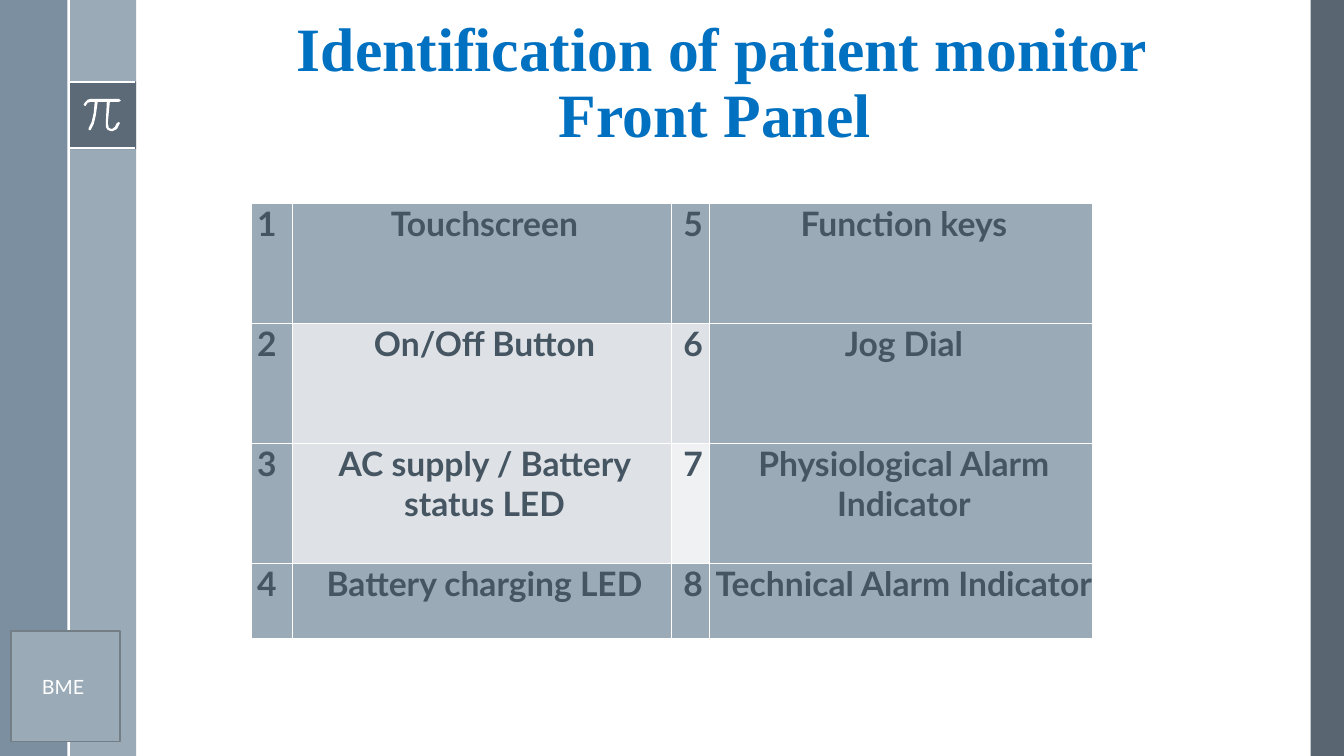
from pptx import Presentation, util as u
from pptx.dml.color import RGBColor
from pptx.enum import shapes, text
from pptx.oxml import parse_xml
from pptx.oxml.ns import nsdecls, qn

SLATE, STEEL, WHITE = "475562", "9BAAB7", "FFFFFF"
PALE, PALER = "DEE2E6", "EFF1F3"
BODY_FONT = "Lato"

PARTS = [
    ("1", "Touchscreen", "5", "Function keys"),
    ("2", "On/Off Button", "6", "Jog Dial"),
    ("3", "AC supply / Battery status LED", "7", "Physiological Alarm Indicator"),
    ("4", "Battery charging LED", "8", "Technical Alarm Indicator"),
]
PALE_CELLS = {(1, 1): PALE, (1, 2): PALE, (2, 1): PALE, (2, 2): PALER}

# Outline of the pi sign, in inches from its own top left corner
PI_POINTS = [
    (0.35, 0), (0.07, 0), (0.04, 0.01), (0.01, 0.04), (0, 0.06), (0.01, 0.07),
    (0.02, 0.07), (0.04, 0.04), (0.07, 0.03), (0.11, 0.03), (0.1, 0.14),
    (0.08, 0.23), (0.05, 0.29), (0.05, 0.31), (0.06, 0.31), (0.07, 0.31),
    (0.1, 0.25), (0.12, 0.17), (0.14, 0.03), (0.23, 0.03), (0.22, 0.24),
    (0.22, 0.28), (0.24, 0.31), (0.27, 0.32), (0.29, 0.32), (0.33, 0.3),
    (0.36, 0.24), (0.35, 0.23), (0.33, 0.24), (0.31, 0.28), (0.28, 0.3),
    (0.25, 0.29), (0.24, 0.24), (0.26, 0.03), (0.35, 0.03), (0.37, 0.02),
]


def rgb(value):
    return RGBColor.from_string(value)


def style_paragraph(p, font, size, color, bold=False):
    for r in p.runs:
        r.font.name, r.font.size, r.font.bold = font, u.Pt(size), bold
        r.font.color.rgb = rgb(color)


def fill_shape(sp, color, opacity=100):
    sp.shadow.inherit = False
    sp.fill.solid()
    sp.fill.fore_color.rgb = rgb(color)
    sp.line.fill.background()
    if opacity < 100:
        clr = sp.fill._xPr.find(".//" + qn("a:srgbClr"))
        clr.append(parse_xml(f'<a:alpha {nsdecls("a")} val="{opacity * 1000}"/>'))


def add_rect(s, x, y, w, h, color, opacity=100):
    sp = s.shapes.add_shape(shapes.MSO_SHAPE.RECTANGLE, *map(u.Inches, (x, y, w, h)))
    fill_shape(sp, color, opacity)
    return sp


def add_rule(s, x1, y1, x2, y2):
    line = s.shapes.add_connector(
        shapes.MSO_CONNECTOR.STRAIGHT, *map(u.Inches, (x1, y1, x2, y2)))
    line.line.color.rgb = rgb(WHITE)
    line.line.width = u.Pt(1.5)
    line._element.spPr.append(parse_xml(f'<a:effectLst {nsdecls("a")}/>'))


def add_pi(s, x, y):
    points = [(u.Inches(x + dx), u.Inches(y + dy)) for dx, dy in PI_POINTS]
    builder = s.shapes.build_freeform(*points[0])
    builder.add_line_segments(points[1:], close=True)
    fill_shape(builder.convert_to_shape(), WHITE)


def add_side_bands(s, width, height):
    band, inner, tile_y = 0.67, 0.68, 0.81
    add_rect(s, width - 0.33, 0, 0.33, height, SLATE, 90)
    add_rect(s, inner, 0, band, height, STEEL)
    add_rect(s, 0, 0, band, height, "6A8093", 88)
    # Tile with the pi sign
    add_rect(s, inner, tile_y, band, band, SLATE, 75)
    for y in (tile_y, tile_y + 0.66):
        add_rule(s, inner, y, inner + 0.66, y)
    add_pi(s, inner + 0.15, tile_y + 0.17)
    add_rule(s, inner, 0, inner, height)


def add_title(s, x, y, w, h):
    title = s.shapes.title
    title.left, title.top, title.width, title.height = map(u.Inches, (x, y, w, h))
    tf = title.text_frame
    tf.text = " Identification of patient monitor\vFront Panel"
    tf.word_wrap = True
    tf.auto_size = text.MSO_AUTO_SIZE.NONE
    tf.vertical_anchor = text.MSO_ANCHOR.BOTTOM
    p = tf.paragraphs[0]
    p.alignment = text.PP_ALIGN.CENTER
    p.line_spacing = 0.9
    style_paragraph(p, "Times New Roman", 44, "0070C0", True)


def format_cell(cell, color, is_first):
    cell.margin_left = cell.margin_right = cell.margin_top = cell.margin_bottom = 0
    p = cell.text_frame.paragraphs[0]
    p.alignment = text.PP_ALIGN.LEFT if is_first else text.PP_ALIGN.CENTER
    p._p.get_or_add_pPr().set("marL", str(u.Inches(0.06 if is_first else 0.05)))
    style_paragraph(p, BODY_FONT, 24, "465562", True)
    # Borders come before the fill
    tc_pr = cell._tc.get_or_add_tcPr()
    for side in "LRTB":
        tc_pr.append(parse_xml(
            f'<a:ln{side} {nsdecls("a")} w="{u.Pt(1)}"><a:solidFill>'
            f'<a:srgbClr val="{WHITE}"/></a:solidFill></a:ln{side}>'))
    cell.fill.solid()
    cell.fill.fore_color.rgb = rgb(color)


def add_parts_table(s, x, y):
    widths, heights = (0.41, 3.76, 0.38, 3.8), (1.19, 1.19, 1.19, 0.75)
    frame = s.shapes.add_table(
        len(heights), len(widths), *map(u.Inches, (x, y, sum(widths), sum(heights))))
    table = frame.table
    table.first_row = table.horz_banding = False
    for column, width in zip(table.columns, widths):
        column.width = u.Inches(width)
    for i, (row, height) in enumerate(zip(table.rows, heights)):
        row.height = u.Inches(height)
        for j, cell in enumerate(row.cells):
            cell.text_frame.text = PARTS[i][j]
            format_cell(cell, PALE_CELLS.get((i, j), STEEL), j == 0)


def add_badge(s, x, y, w, h):
    sp = add_rect(s, x, y, w, h, STEEL)
    sp.line.color.rgb = rgb("737E87")
    sp.line.width = u.Pt(1)
    tf = sp.text_frame
    tf.text = "BME "
    tf.word_wrap = True
    tf.vertical_anchor = text.MSO_ANCHOR.MIDDLE
    p = tf.paragraphs[0]
    p.alignment = text.PP_ALIGN.CENTER
    style_paragraph(p, BODY_FONT, 14, WHITE)


def main():
    width, height = 13.33, 7.5
    prs = Presentation()
    prs.slide_width, prs.slide_height = u.Inches(width), u.Inches(height)
    s = prs.slides.add_slide(prs.slide_layouts[5])
    add_side_bands(s, width, height)
    add_title(s, 1.74, 0.19, 10.7, 1.36)
    add_parts_table(s, 2.49, 2.02)
    add_badge(s, 0.11, 6.26, 1.08, 1.1)
    prs.save("out.pptx")


if __name__ == "__main__":
    main()
